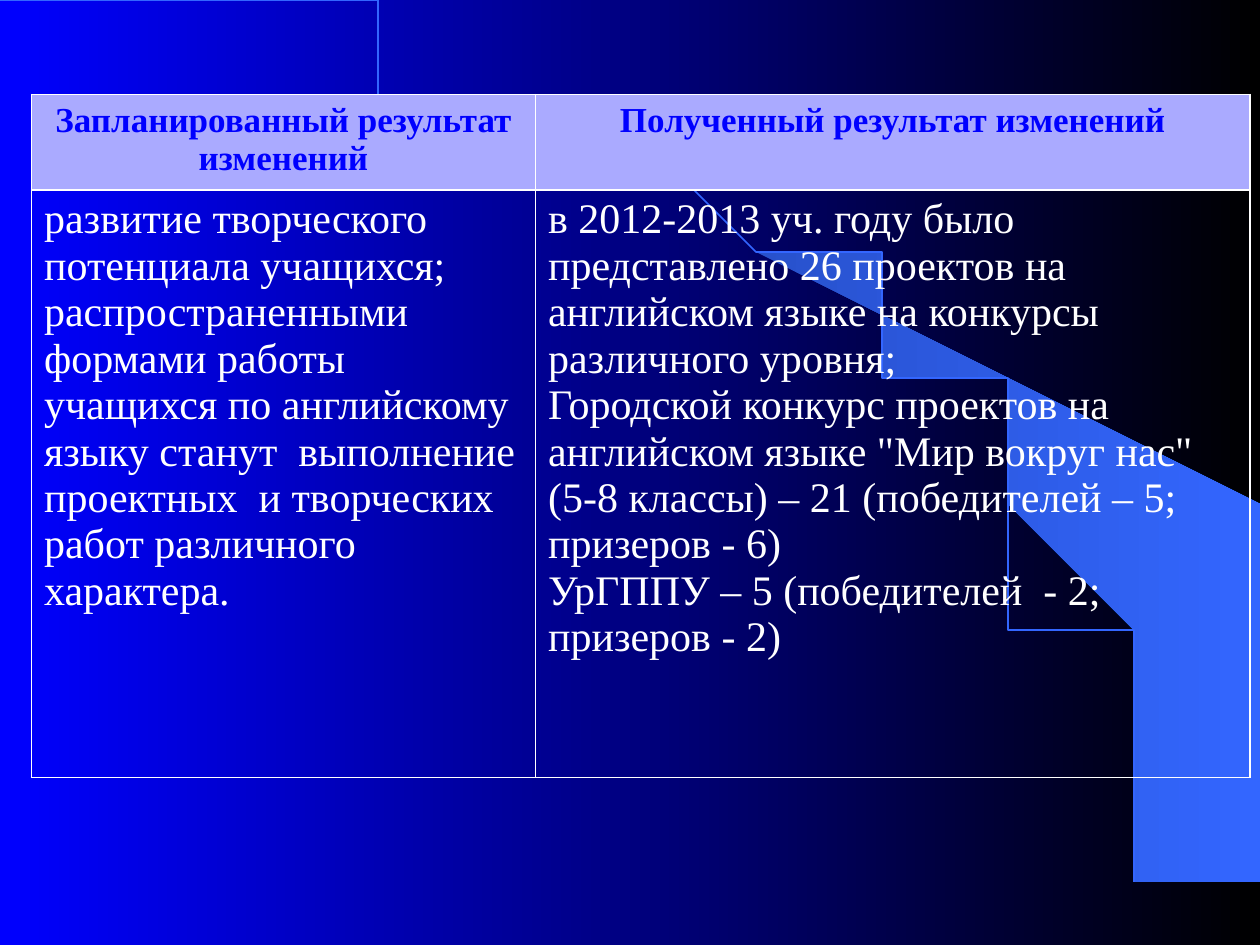
import math

import lxml.etree
import pptx
import pptx.dml.color
import pptx.enum.text
import pptx.oxml
import pptx.oxml.ns
import pptx.util

Inches = pptx.util.Inches
Pt = pptx.util.Pt
RGBColor = pptx.dml.color.RGBColor

BLUE = RGBColor(0x00, 0x00, 0xFF)
BLACK = RGBColor(0x00, 0x00, 0x00)
WHITE = RGBColor(0xFF, 0xFF, 0xFF)
LAVENDER = RGBColor(0xAA, 0xAA, 0xFF)
SKY = RGBColor(0x33, 0x66, 0xFF)
DEEP_SKY = RGBColor(0x28, 0x51, 0xCC)
FONT = "Times New Roman"


def set_gradient(fill, start, end):
    fill.gradient()
    fill.gradient_angle = 0
    for stop, color in zip(fill.gradient_stops, (start, end)):
        stop.color.rgb = color


def add_outline(shapes, points, close):
    builder = shapes.build_freeform(*points[0], scale=Inches(1))
    builder.add_line_segments(points[1:], close=close)
    outline = builder.convert_to_shape()
    outline.shadow.inherit = False
    return outline


deck = pptx.Presentation()
deck.slide_width = Inches(10)
deck.slide_height = Inches(7.5)
page = deck.slides.add_slide(deck.slide_layouts[6])
set_gradient(page.background.fill, BLUE, BLACK)

crescent_points = [
    (9.2, 7.48), (9.99, 7.49), (9.99, 4.23), (5.89, 1.73), (6.24, 1.99),
    (6.53, 2.22), (6.85, 2.5), (7.16, 2.8), (7.62, 3.3), (8.03, 3.84),
    (8.32, 4.31), (8.58, 4.79), (8.78, 5.28), (8.93, 5.72), (9.03, 6.09),
    (9.13, 6.56), (9.17, 6.96),
]
crescent = add_outline(page.shapes, crescent_points, True)
set_gradient(crescent.fill, DEEP_SKY, SKY)
crescent.line.fill.background()

arc_width, arc_height = 9.2, 7.49
arc_points = []
for degree in range(91):
    angle = math.radians(degree)
    arc_points.append((arc_width * math.sin(angle), arc_height * (1 - math.cos(angle))))
arc = add_outline(page.shapes, arc_points, False)
arc.fill.background()
arc.line.color.rgb = SKY
arc.line.width = Pt(1)

rows = [
    [
        ["Запланированный результат изменений"],
        ["Полученный результат изменений"],
    ],
    [
        ["развитие творческого потенциала учащихся; распространенными формами "
         "работы учащихся по английскому языку станут  выполнение проектных  "
         "и творческих работ различного характера."],
        ["в 2012-2013 уч. году было представлено 26 проектов на английском языке "
         "на конкурсы различного уровня;",
         "Городской конкурс проектов на английском языке \"Мир вокруг нас\" "
         "(5-8 классы) – 21 (победителей – 5; призеров - 6)",
         "УрГППУ – 5 (победителей  - 2; призеров - 2)"],
    ],
]
frame = page.shapes.add_table(2, 2, Inches(0.25), Inches(0.75), Inches(9.67), Inches(5.42))
table = frame.table
table.horz_banding = False
table.first_row = False
for column, width in zip(table.columns, (4, 5.67)):
    column.width = Inches(width)
for row, height in zip(table.rows, (0.76, 4.66)):
    row.height = Inches(height)

for row_index, row_texts in enumerate(rows):
    is_header = row_index == 0
    for column_index, texts in enumerate(row_texts):
        cell = table.cell(row_index, column_index)
        properties = cell._tc.get_or_add_tcPr()
        for side in ("lnL", "lnR", "lnT", "lnB"):
            border = lxml.etree.SubElement(
                properties, pptx.oxml.ns.qn("a:" + side), w=str(Pt(1)))
            solid = lxml.etree.SubElement(border, pptx.oxml.ns.qn("a:solidFill"))
            lxml.etree.SubElement(solid, pptx.oxml.ns.qn("a:srgbClr"), val=str(WHITE))
        if is_header:
            cell.fill.solid()
            cell.fill.fore_color.rgb = LAVENDER
        else:
            cell.fill.background()
        cell.text = "\n".join(texts)
        for para in cell.text_frame.paragraphs:
            para.font.name = FONT
            para.font.size = Pt(20 if is_header else 24)
            para.font.bold = is_header
            para.font.color.rgb = BLUE if is_header else WHITE
            if is_header:
                para.alignment = pptx.enum.text.PP_ALIGN.CENTER

deck.save("out.pptx")
